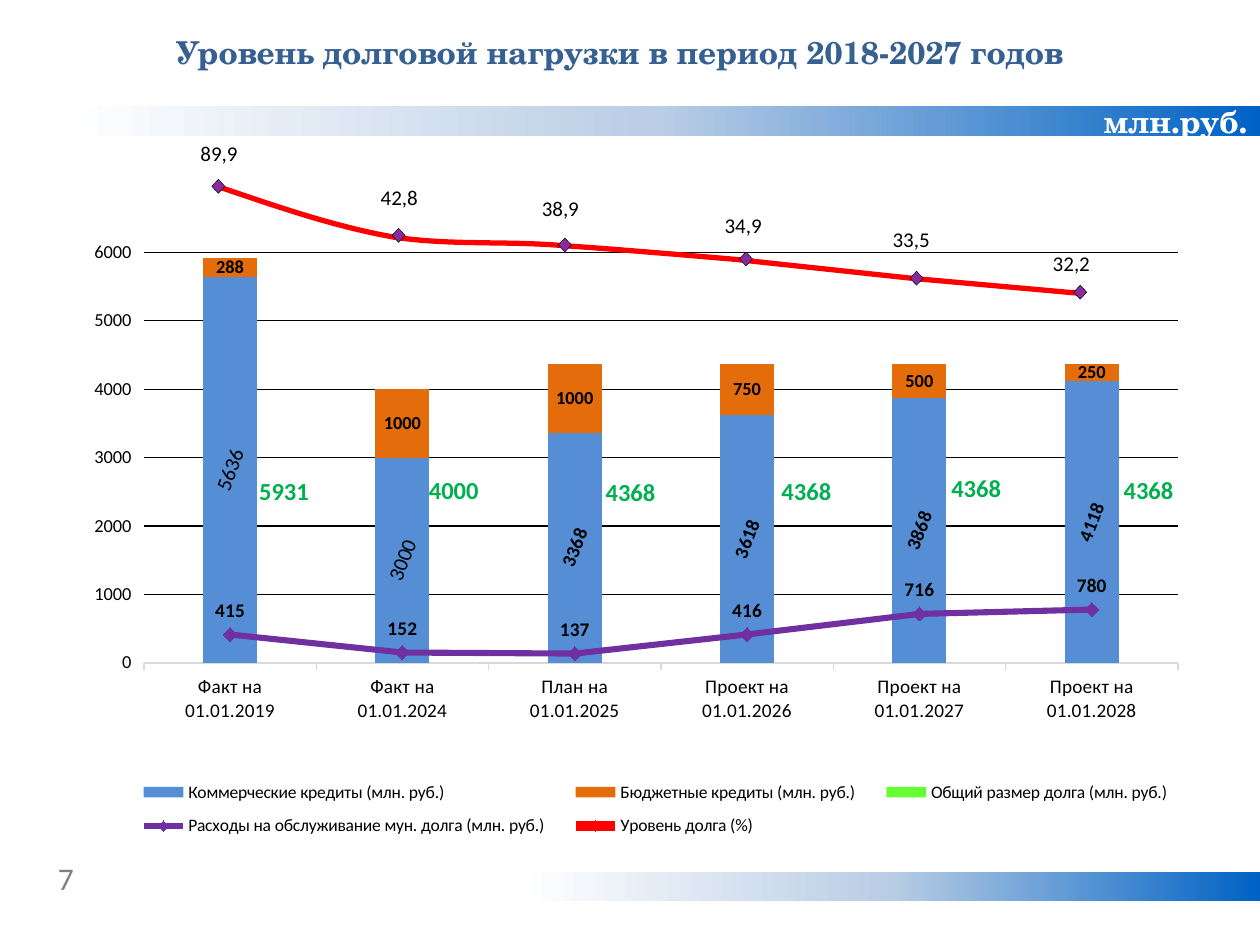
"""Build the slide on the municipal debt burden: stacked columns, service cost line and debt level curve."""
from pptx import Presentation, oxml
from pptx.chart import data
from pptx.dml.color import RGBColor
from pptx.enum import chart as ch, shapes, text
from pptx.oxml import ns
from pptx.util import Pt

BLACK = RGBColor(0, 0, 0)
WHITE = RGBColor(255, 255, 255)
GREY = RGBColor(0x80, 0x80, 0x80)
PALE_GREY = RGBColor(0xD9, 0xD9, 0xD9)
TITLE_BLUE = RGBColor(0x37, 0x60, 0x92)
TOTAL_GREEN = RGBColor(0x00, 0xB0, 0x50)
CREDIT_BLUE = RGBColor(0x55, 0x8E, 0xD5)
BUDGET_ORANGE = RGBColor(0xE4, 0x6C, 0x0A)
DEBT_LIME = RGBColor(0x66, 0xFF, 0x33)
SERVICE_PURPLE = RGBColor(0x70, 0x30, 0xA0)
LEVEL_RED = RGBColor(0xFF, 0, 0)
MARKER_PURPLE = RGBColor(0x88, 0x2B, 0x9B)
SERIF, SANS = "TeX Gyre Schola", "Calibri"
LEFT, CENTER, RIGHT = text.PP_ALIGN.LEFT, text.PP_ALIGN.CENTER, text.PP_ALIGN.RIGHT


def style(font, size, color, bold=False, name=SANS):
    font.size, font.bold, font.name = Pt(size), bold, name
    font.color.rgb = color


def write(frame, words, size, color, bold=False, name=SANS, align=LEFT):
    frame.word_wrap = True
    frame.paragraphs[0].alignment = align
    run = frame.paragraphs[0].add_run()
    run.text = words
    style(run.font, size, color, bold, name)


deck = Presentation()
deck.slide_width, deck.slide_height = Pt(720), Pt(540)
slide = deck.slides.add_slide(deck.slide_layouts[5])
canvas = slide.shapes

heading = canvas.title
heading.left, heading.top, heading.width, heading.height = Pt(31), Pt(15), Pt(646.5), Pt(29)
heading.text_frame.vertical_anchor = text.MSO_ANCHOR.TOP
write(heading.text_frame, "Уровень долговой нагрузки в период 2018-2027 годов",
      18, TITLE_BLUE, True, SERIF, CENTER)

for left, top, unit in ((36.7, 60.5, "млн.руб."), (297.4, 498.2, "")):
    band = canvas.add_shape(shapes.MSO_SHAPE.RECTANGLE, Pt(left), Pt(top), Pt(720 - left), Pt(17))
    band.shadow.inherit = False
    stops = "".join(f'<a:gs pos="{pos}"><a:srgbClr val="{shade}"/></a:gs>'
                    for pos, shade in ((0, "0062C4"), (50000, "B9CDE5"), (100000, "FFFFFF")))
    band.element.spPr.insert(2, oxml.parse_xml(
        f'<a:gradFill {ns.nsdecls("a")}><a:gsLst>{stops}</a:gsLst>'
        '<a:lin ang="10800000" scaled="0"/></a:gradFill>'))
    band.line.fill.background()
    if unit:
        band.text_frame.vertical_anchor = text.MSO_ANCHOR.MIDDLE
        write(band.text_frame, unit, 18, WHITE, True, SERIF, RIGHT)

page = canvas.add_textbox(Pt(26), Pt(487.5), Pt(33), Pt(58))
write(page.text_frame, "7", 18, GREY)

debt = data.CategoryChartData(number_format="General")
debt.categories = ["Факт на\n01.01.2019", "Факт на\n01.01.2024", "План на\n01.01.2025",
                   "Проект на\n01.01.2026", "Проект на\n01.01.2027", "Проект на\n01.01.2028"]
debt.add_series("Коммерческие кредиты (млн. руб.)", (5636, 3000, 3368, 3618, 3868, 4118))
debt.add_series("Бюджетные кредиты (млн. руб.)", (288, 1000, 1000, 750, 500, 250))
debt.add_series("Общий размер долга (млн. руб.)", (0,) + (None,) * 5)
debt.add_series("Расходы на обслуживание мун. долга (млн. руб.)", (415, 152, 137, 416, 716, 780))
debt.add_series("Уровень долга (%)", (None,) * 6)
chart = canvas.add_chart(ch.XL_CHART_TYPE.COLUMN_STACKED, Pt(48), Pt(128), Pt(646.5), Pt(361.5),
                         debt).chart
style(chart.font, 10, BLACK)
chart.has_title = False

bars = chart.plots[0]
bars.gap_width, bars.overlap, bars.vary_by_categories = 219, 100, False
bar_xml = next(chart.element.iter(ns.qn("c:barChart")))
axis_ids = "".join(f'<c:axId val="{axis.get("val")}"/>' for axis in bar_xml.findall(ns.qn("c:axId")))
line_xml = oxml.parse_xml(
    f'<c:lineChart {ns.nsdecls("c")}><c:grouping val="standard"/><c:varyColors val="0"/>'
    f'<c:marker val="1"/>{axis_ids}</c:lineChart>')
bar_xml.addnext(line_xml)
for moved in bar_xml.findall(ns.qn("c:ser"))[3:]:
    for flag in moved.findall(ns.qn("c:invertIfNegative")):
        moved.remove(flag)
    line_xml.find(ns.qn("c:marker")).addprevious(moved)

credits, budget, total = bars.series
service, level = chart.plots[1].series
for column, color in ((credits, CREDIT_BLUE), (budget, BUDGET_ORANGE), (total, DEBT_LIME)):
    column.format.fill.solid()
    column.format.fill.fore_color.rgb = color
for line, color, width, size, inner in ((service, SERVICE_PURPLE, 3.5, 8, SERVICE_PURPLE),
                                        (level, LEVEL_RED, 5.25, 7, MARKER_PURPLE)):
    line.smooth = False
    line.format.line.color.rgb, line.format.line.width = color, Pt(width)
    line.marker.style, line.marker.size = ch.XL_MARKER_STYLE.DIAMOND, size
    line.marker.format.fill.solid()
    line.marker.format.fill.fore_color.rgb = inner
    line.marker.format.line.color.rgb = color

for series, place, size in ((credits, "CENTER", 11), (budget, "CENTER", 10.5),
                            (service, "ABOVE", 11), (level, "BELOW", 11)):
    series.data_labels.show_value = True
    series.data_labels.position = ch.XL_LABEL_POSITION[place]
    style(series.data_labels.font, size, BLACK, True)
for index in range(2):
    fact = credits.points[index].data_label
    style(fact.font, 12, BLACK)
    fact.position = ch.XL_LABEL_POSITION.CENTER
for body in bar_xml.find(ns.qn("c:ser")).iter(ns.qn("a:bodyPr")):
    body.set("rot", "-4140000")
    body.set("vert", "horz")

dates, millions = chart.category_axis, chart.value_axis
style(dates.tick_labels.font, 11, BLACK)
dates.format.line.color.rgb, dates.format.line.width = PALE_GREY, Pt(0.75)
style(millions.tick_labels.font, 10.5, BLACK)
millions.minimum_scale, millions.maximum_scale, millions.major_unit = 0, 6000, 1000
millions.format.line.fill.background()
millions.major_gridlines.format.line.color.rgb = BLACK
millions.major_gridlines.format.line.width = Pt(0.75)

chart.has_legend = True
chart.legend.position = ch.XL_LEGEND_POSITION.BOTTOM
chart.legend.include_in_layout = False
style(chart.legend.font, 10, BLACK)
for part, index, target, box in (("plotArea", 0, '<c:layoutTarget val="inner"/>', (0.053, 0.045, 0.914, 0.649)),
                                 ("legend", 1, "", (0.03, 0.86, 0.95, 0.13))):
    area = next(chart.element.iter(ns.qn(f"c:{part}")))
    for old in area.findall(ns.qn("c:layout")):
        area.remove(old)
    sides = "".join(f'<c:{side} val="{share}"/>' for side, share in zip("xywh", box))
    area.insert(index, oxml.parse_xml(
        f'<c:layout {ns.nsdecls("c")}><c:manualLayout>{target}<c:xMode val="edge"/>'
        f'<c:yMode val="edge"/>{sides}</c:manualLayout></c:layout>'))

for percent, left, top in (("89,9", 107.5, 77), ("42,8", 210.5, 102), ("38,9", 302.5, 108),
                           ("34,9", 407, 118), ("33,5", 503, 126), ("32,2", 594.5, 139.5)):
    label = canvas.add_textbox(Pt(left), Pt(top), Pt(42), Pt(21.5))
    write(label.text_frame, percent, 12, BLACK)

for sum_total, left, top in (("5931", 141, 268.5), ("4000", 238, 268), ("4368", 339, 269),
                             ("4368", 439.5, 268.5), ("4368", 536.5, 267), ("4368", 635, 268)):
    label = canvas.add_textbox(Pt(left), Pt(top), Pt(50), Pt(24.5))
    write(label.text_frame, sum_total, 14, TOTAL_GREEN, True)

arcs = (((124.6, 106.6), (158.4, 118.1), (191.5, 129.6), (224.6, 135.4)),
        ((224.6, 135.4), (257, 140.4), (289.4, 137.5), (322.6, 140.4)),
        ((322.6, 140.4), (355.7, 142.6), (421.2, 148.3), (421.2, 148.3)))
steps = [n / 12 for n in range(1, 13)]
route = [tuple(Pt((1 - t) ** 3 * a + 3 * (1 - t) ** 2 * t * b + 3 * (1 - t) * t ** 2 * c + t ** 3 * d)
               for a, b, c, d in zip(*arc)) for arc in arcs for t in steps]
route += [(Pt(522), Pt(159.1)), (Pt(619.2), Pt(167.8))]
builder = canvas.build_freeform(Pt(124.6), Pt(106.6))
builder.add_line_segments(route, close=False)
curve = builder.convert_to_shape()
curve.shadow.inherit = False
curve.fill.background()
curve.line.color.rgb, curve.line.width = LEVEL_RED, Pt(3)

for left, top in ((121, 102.5), (224, 130.5), (319, 136), (422.5, 144), (520, 155), (613.5, 163)):
    diamond = canvas.add_shape(shapes.MSO_SHAPE.DIAMOND, Pt(left), Pt(top), Pt(7.5), Pt(8))
    diamond.shadow.inherit = False
    diamond.fill.solid()
    diamond.fill.fore_color.rgb = MARKER_PURPLE
    diamond.line.color.rgb, diamond.line.width = BLACK, Pt(0.25)

deck.save("out.pptx")
